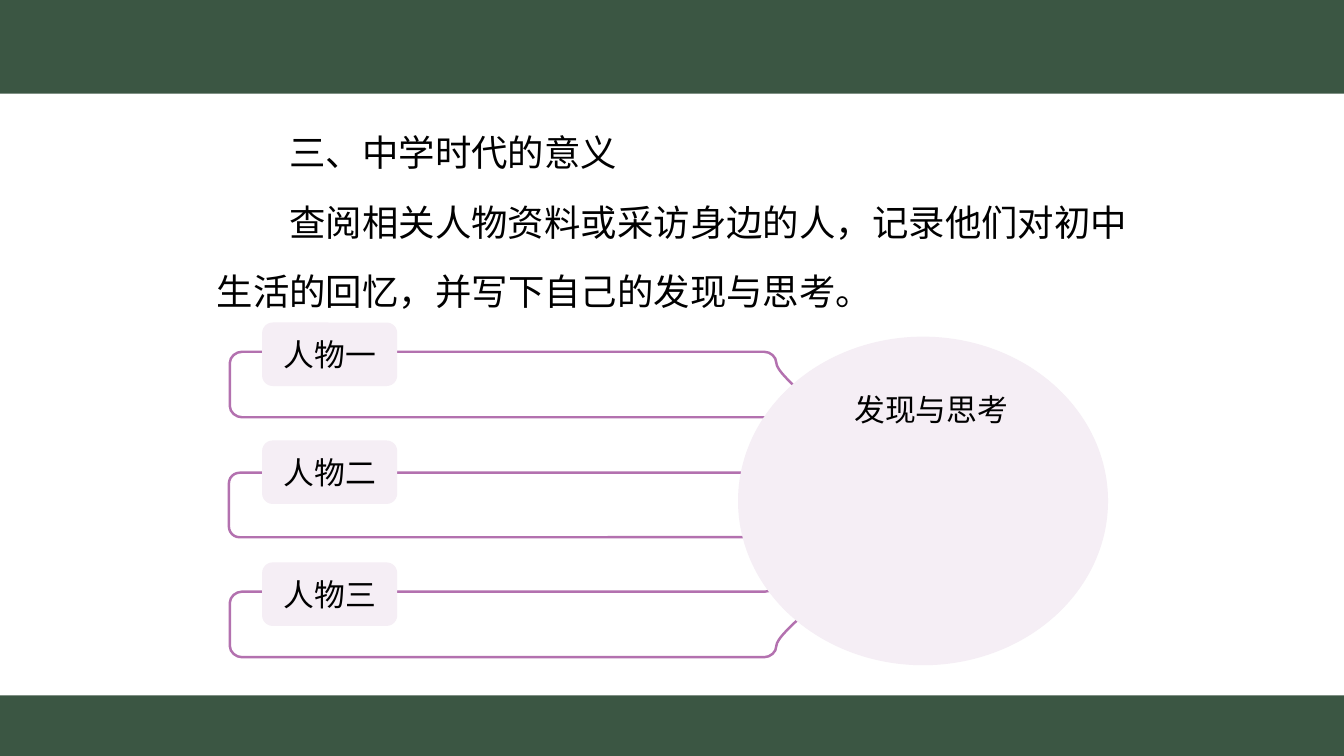
from lxml import etree
from pptx import Presentation
from pptx.dml.color import RGBColor
from pptx.enum import shapes, text
from pptx.oxml.ns import qn
from pptx.util import Inches, Pt

GREEN, PURPLE, PALE, BLACK = "3B5643", "B371AF", "F5EEF5", "000000"
CHINESE_FONT = "Noto Sans CJK SC"
SHAPE = shapes.MSO_SHAPE


def color(value):
    return RGBColor.from_string(value)


def style(shape, fill=None, line=None):
    shape.shadow.inherit = False
    if fill:
        shape.fill.solid()
        shape.fill.fore_color.rgb = color(fill)
    else:
        shape.fill.background()
    if line:
        shape.line.color.rgb = color(line)
        shape.line.width = Pt(1.75)
    else:
        shape.line.fill.background()


def add_shape(page, kind, box, fill=None, line=None):
    shape = page.shapes.add_shape(kind, *map(Inches, box))
    style(shape, fill, line)
    return shape


def write(para, words, size, font=CHINESE_FONT, spacing=1.0):
    para.text = words
    para.line_spacing = spacing
    para.font.size = Pt(size)
    para.font.name = font
    para.font.color.rgb = color(BLACK)
    east_asian = etree.SubElement(para.font._element, qn("a:ea"))
    east_asian.set("typeface", CHINESE_FONT)


def bands(page):
    for top, height in ((0, 0.93), (6.9, 0.6)):
        add_shape(page, SHAPE.RECTANGLE, (0, top, 13.33, height), GREEN)


def introduction(page, box):
    frame = page.shapes.add_textbox(*map(Inches, box)).text_frame
    frame.word_wrap = True
    lines = (
        ("三、中学时代的意义", "Arial", 2),
        ("查阅相关人物资料或采访身边的人，记录他们对初中", CHINESE_FONT, 2),
        ("生活的回忆，并写下自己的发现与思考。", CHINESE_FONT, 0),
    )
    size = 26
    for index, (words, font, indent) in enumerate(lines):
        para = frame.add_paragraph() if index else frame.paragraphs[0]
        write(para, words, size, font, spacing=1.6)
        # Indent counted in characters
        properties = para._p.get_or_add_pPr()
        properties.set("marL", "0")
        properties.set("indent", str(Pt(size * indent)))


def outer_frame(page, box, flipped=False):
    """Rounded frame whose right end flares towards the circle."""
    left, top, width, height = box
    right, low = width - 0.62, 0.65  # body's right side and lower edge
    # One point is a straight line; three points are a curve
    segments = (
        [(0, low - 0.11)],
        [(0, low - 0.05), (0.06, low), (0.12, low)],
        [(right - 0.12, low)],
        [(right - 0.06, low), (width, height), (width, height - 0.01)],
        [(width, low + 0.02), (right, 0.25), (right, 0.11)],
        [(right, 0.05), (right - 0.06, 0), (right - 0.12, 0)],
        [(0.12, 0)],
        [(0.06, 0), (0, 0.05), (0, 0.11)],
    )
    points = [(Inches(left + x), Inches(top + (height - y if flipped else y)))
              for segment in segments for x, y in segment]
    builder = page.shapes.build_freeform(*points[0])
    builder.add_line_segments(points[1:], close=True)
    outline = builder.convert_to_shape()
    style(outline, line=PURPLE)
    # Join each set of three points into one curve
    steps = iter(list(outline._element.iter(qn("a:lnTo"))))
    for segment in segments[1:]:
        group = [next(steps) for point in segment]
        if len(group) == 3:
            group[0].addprevious(curve := etree.Element(qn("a:cubicBezTo")))
            for step in group:
                curve.append(step[0])
                step.getparent().remove(step)


def person_tag(page, box, words):
    tag = add_shape(page, SHAPE.ROUNDED_RECTANGLE, box, PALE)
    frame = tag.text_frame
    frame.word_wrap = False
    frame.vertical_anchor = text.MSO_ANCHOR.MIDDLE
    write(frame.paragraphs[0], words, 22)
    frame.paragraphs[0].alignment = text.PP_ALIGN.CENTER


def people(page, box):
    left, top, width, height = box
    # Frames: the lowest mirrors the highest
    outer_frame(page, (left, top + 0.29, width, 0.83))
    add_shape(page, SHAPE.ROUNDED_RECTANGLE,
              (left - 0.01, top + 1.49, width - 0.19, 0.64), line=PURPLE)
    outer_frame(page, (left, top + height - 0.83, width, 0.83), flipped=True)
    # Name tags
    for offset, words in ((0, "人物一"), (1.17, "人物二"), (2.38, "人物三")):
        person_tag(page, (left + 0.32, top + offset, 1.34, 0.63), words)


def findings(page, box):
    left, top, width, height = box
    add_shape(page, SHAPE.OVAL, box, PALE)
    label_width = 1.74
    label = page.shapes.add_textbox(*map(Inches, (
        left + (width - label_width) / 2 + 0.09, top + 0.3, label_width, 0.57)))
    label.text_frame.word_wrap = False
    write(label.text_frame.paragraphs[0], "发现与思考", 22, spacing=1.5)


def main():
    deck = Presentation()
    deck.slide_width, deck.slide_height = Inches(13.33), Inches(7.5)
    page = deck.slides.add_slide(deck.slide_layouts[6])
    bands(page)
    introduction(page, (2.05, 0.98, 9.98, 2.13))
    people(page, (2.28, 3.2, 6.04, 3.32))
    findings(page, (7.32, 3.34, 3.67, 3.26))
    deck.save("out.pptx")


if __name__ == "__main__":
    main()
